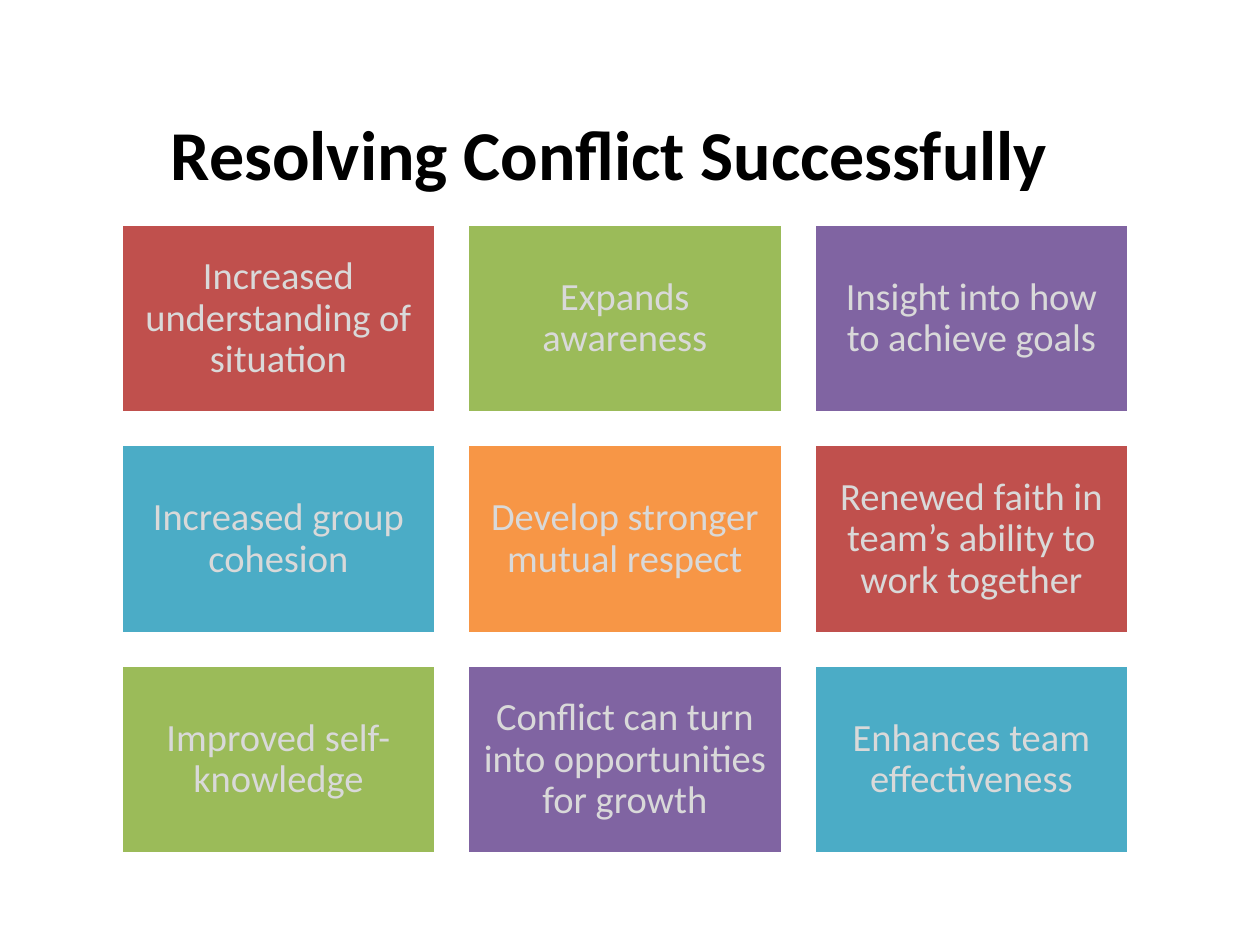
from dataclasses import dataclass
from itertools import cycle

from pptx import Presentation
from pptx.dml.color import RGBColor
from pptx.enum.shapes import MSO_SHAPE as Shape
from pptx.enum.text import MSO_ANCHOR as Anchor, PP_ALIGN as Align
from pptx.util import Inches, Pt

TITLE = "Resolving Conflict Successfully"
BENEFITS = [
    "Increased understanding of situation",
    "Expands awareness",
    "Insight into how to achieve goals",
    "Increased group cohesion",
    "Develop stronger mutual respect",
    "Renewed faith in team’s ability to work together",
    "Improved self-knowledge",
    "Conflict can turn into opportunities for growth",
    "Enhances team effectiveness",
]


@dataclass(frozen=True)
class Theme:
    font: str = "Calibri"
    title_size: int = 40
    tile_size: int = 22
    title_color: str = "000000"
    tile_text: str = "D9D9D9"
    outline: str = "FFFFFF"
    outline_width: int = 2
    accents: tuple = ("C0504D", "9BBB59", "8064A2", "4BACC6", "F79646")


THEME = Theme()
SLIDE_WIDTH, SLIDE_HEIGHT = 10, 7.5
COLUMNS = 3
GRID_LEFT, GRID_TOP = 0.96, 1.78
TILE_WIDTH, TILE_HEIGHT, GAP = 2.5, 1.5, 0.25
TILE_INSET = 0.09


def write(shape, text, size, color, bold=False):
    """Fill the shape with one centred paragraph and return it."""
    shape.text_frame.word_wrap = True
    paragraph = shape.text_frame.paragraphs[0]
    paragraph.alignment = Align.CENTER
    run = paragraph.add_run()
    run.text = text
    run.font.name = THEME.font
    run.font.size = Pt(size)
    run.font.bold = bold
    run.font.color.rgb = RGBColor.from_string(color)
    return paragraph


def add_title(slide):
    box = slide.shapes.add_textbox(0, Inches(0.83), Inches(9.67), Inches(0.77))
    write(box, TITLE, THEME.title_size, THEME.title_color, bold=True)


def add_tile(slide, index, text, fill):
    row, column = divmod(index, COLUMNS)
    tile = slide.shapes.add_shape(
        Shape.RECTANGLE,
        Inches(GRID_LEFT + column * (TILE_WIDTH + GAP)),
        Inches(GRID_TOP + row * (TILE_HEIGHT + GAP)),
        Inches(TILE_WIDTH),
        Inches(TILE_HEIGHT),
    )
    tile.shadow.inherit = False
    tile.fill.solid()
    tile.fill.fore_color.rgb = RGBColor.from_string(fill)
    tile.line.color.rgb = RGBColor.from_string(THEME.outline)
    tile.line.width = Pt(THEME.outline_width)

    frame = tile.text_frame
    frame.vertical_anchor = Anchor.MIDDLE
    frame.margin_left = frame.margin_right = Inches(TILE_INSET)
    frame.margin_top = frame.margin_bottom = Inches(TILE_INSET)
    paragraph = write(tile, text, THEME.tile_size, THEME.tile_text)
    paragraph.line_spacing = 0.9


def main():
    presentation = Presentation()
    presentation.slide_width = Inches(SLIDE_WIDTH)
    presentation.slide_height = Inches(SLIDE_HEIGHT)
    slide = presentation.slides.add_slide(presentation.slide_layouts[6])
    add_title(slide)
    for index, (text, fill) in enumerate(zip(BENEFITS, cycle(THEME.accents))):
        add_tile(slide, index, text, fill)
    presentation.save("out.pptx")


if __name__ == "__main__":
    main()
